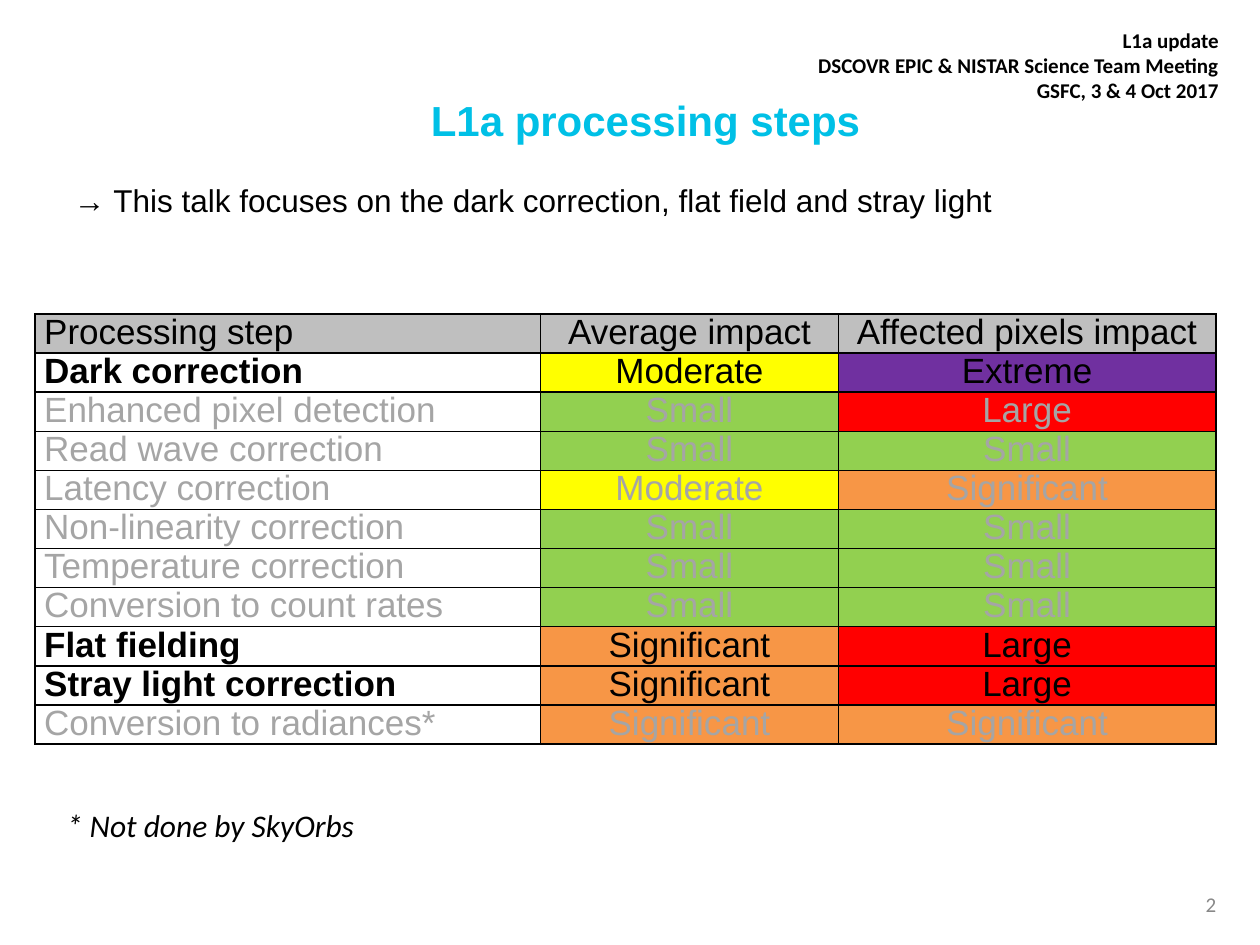
from lxml.etree import SubElement
from pptx import Presentation
from pptx.dml.color import RGBColor
from pptx.enum.text import MSO_ANCHOR, PP_ALIGN
from pptx.oxml.ns import qn
from pptx.util import Cm, Pt

BLACK, GRAY = "000000", "A5A5A5"
FILLS = {
    "Small": "92D050", "Moderate": "FFFF00", "Significant": "F79646",
    "Large": "FF0000", "Extreme": "7030A0",
}
HEADS = ("Processing step", "Average impact", "Affected pixels impact")
STEPS = (
    ("Dark correction", "Moderate", "Extreme"),
    ("Enhanced pixel detection", "Small", "Large"),
    ("Read wave correction", "Small", "Small"),
    ("Latency correction", "Moderate", "Significant"),
    ("Non-linearity correction", "Small", "Small"),
    ("Temperature correction", "Small", "Small"),
    ("Conversion to count rates", "Small", "Small"),
    ("Flat fielding", "Significant", "Large"),
    ("Stray light correction", "Significant", "Large"),
    ("Conversion to radiances*", "Significant", "Significant"),
)
TOPICS = ("Dark correction", "Flat fielding", "Stray light correction")


def tint(code):
    """Turn a hex string into a colour."""
    return RGBColor.from_string(code)


def style(para, color=BLACK, align=PP_ALIGN.LEFT, **look):
    """Format a paragraph and its font."""
    para.alignment = align
    para.font.color.rgb = tint(color)
    for name, value in look.items():
        setattr(para.font, name, value)


def place(shape, box, lines, anchor=MSO_ANCHOR.TOP, **look):
    """Fit a text shape to a box in centimetres and write its lines."""
    for name, value in zip(("left", "top", "width", "height"), box):
        setattr(shape, name, Cm(value))
    frame = shape.text_frame
    frame.word_wrap = True
    frame.vertical_anchor = anchor
    frame.text = "\n".join(lines)
    for para in frame.paragraphs:
        style(para, **look)


def label(slide, box, lines, **look):
    """Add a text box."""
    shape = slide.shapes.add_textbox(*(Cm(value) for value in box))
    place(shape, box, lines, **look)


def edge(cell):
    """Draw thin black borders around a cell."""
    props = cell._tc.get_or_add_tcPr()
    for side in ("lnL", "lnR", "lnT", "lnB"):
        line = SubElement(props, qn(f"a:{side}"), w=str(Pt(1)))
        fill = SubElement(line, qn("a:solidFill"))
        SubElement(fill, qn("a:srgbClr"), val=BLACK)


def write(cell, text, fill, align, **look):
    """Fill and format one table cell."""
    edge(cell)
    margins = {"margin_left": 0.18, "margin_right": 0.18,
               "margin_top": 0, "margin_bottom": 0}
    for name, value in margins.items():
        setattr(cell, name, Cm(value))
    cell.vertical_anchor = MSO_ANCHOR.MIDDLE
    cell.text = text
    para = cell.text_frame.paragraphs[0]
    para.line_spacing = 0.92
    style(para, align=align, name="Arial", size=Pt(20), **look)
    if fill:
        cell.fill.solid()
        cell.fill.fore_color.rgb = tint(fill)
    else:
        cell.fill.background()


def grid(slide, box, widths):
    """Add the table of processing steps."""
    rows = (HEADS, *STEPS)
    table = slide.shapes.add_table(
        len(rows), len(HEADS), *(Cm(value) for value in box)).table
    table.first_row = table.horz_banding = False
    for col, width in zip(table.columns, widths):
        col.width = Cm(width)
    for row, texts in zip(table.rows, rows):
        row.height = Cm(box[3] / len(rows))
        topic, head = texts[0] in TOPICS, texts is HEADS
        color = BLACK if topic or head else GRAY
        for spot, (cell, text) in enumerate(zip(row.cells, texts)):
            fill = "BFBFBF" if head else FILLS.get(text)
            align = PP_ALIGN.CENTER if spot else PP_ALIGN.JUSTIFY
            write(cell, text, fill, align, color=color,
                  bold=topic and spot == 0)


def main():
    """Build the slide and save it."""
    deck = Presentation()
    deck.slide_width, deck.slide_height = Cm(25.4), Cm(19.05)
    slide = deck.slides.add_slide(deck.slide_layouts[5])
    label(slide, (16.11, 0.43, 8.71, 1.8),
          ("L1a update", "DSCOVR EPIC & NISTAR Science Team Meeting",
           "GSFC, 3 & 4 Oct 2017"),
          align=PP_ALIGN.RIGHT, name="Calibri", size=Pt(12), bold=True)
    label(slide, (23.7, 17.72, 1.07, 1), ("2",), anchor=MSO_ANCHOR.MIDDLE,
          align=PP_ALIGN.RIGHT, name="Calibri", size=Pt(12), color="888888")
    place(slide.shapes.title, (8.43, 1.78, 9.6, 1.27),
          ("L1a processing steps",),
          name="Arial", size=Pt(24), bold=True, color="00C0E6")
    grid(slide, (0.71, 6.33, 23.8, 8.67), (10.19, 6, 7.61))
    label(slide, (1.1, 16.13, 6.96, 1.02), ("* Not done by SkyOrbs",),
          name="Calibri", size=Pt(18), italic=True)
    label(slide, (1.24, 3.53, 22.86, 1.02),
          ("→ This talk focuses on the dark correction, "
           "flat field and stray light",),
          name="Arial", size=Pt(18))
    deck.save("out.pptx")


if __name__ == "__main__":
    main()
